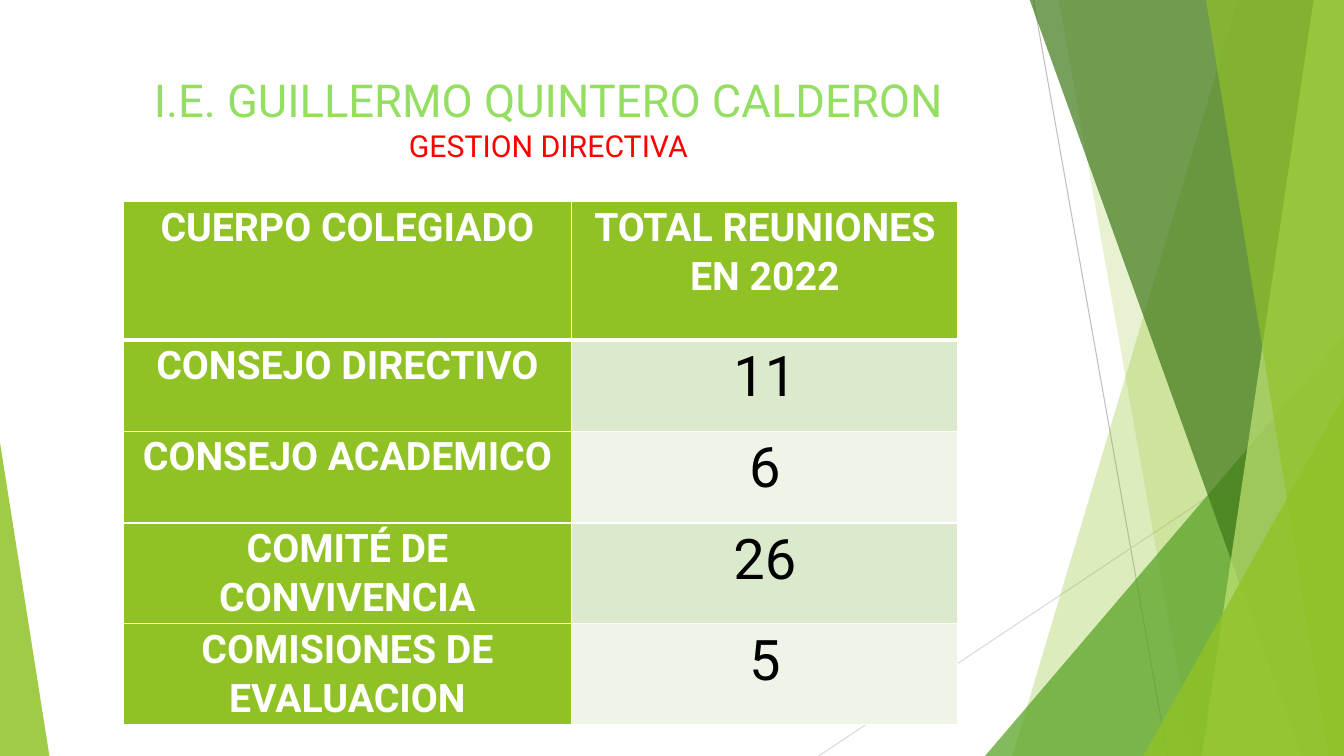
import pptx
import pptx.dml.color
import pptx.enum.shapes
import pptx.enum.text
import pptx.oxml.ns
import pptx.util
from lxml import etree

Inches = pptx.util.Inches
RGBColor = pptx.dml.color.RGBColor
qn = pptx.oxml.ns.qn

FONT = "Roboto"
WHITE = RGBColor(0xFF, 0xFF, 0xFF)
BLACK = RGBColor(0x00, 0x00, 0x00)
RED = RGBColor(0xFF, 0x00, 0x00)
TITLE_GREEN = RGBColor(0x94, 0xDE, 0x61)
LIME = RGBColor(0x90, 0xC2, 0x26)
PALE_LIME = RGBColor(0xC0, 0xE4, 0x74)
GREEN = RGBColor(0x54, 0xA0, 0x21)
DARK_GREEN = RGBColor(0x3F, 0x78, 0x19)
BAND_DARK = RGBColor(0xDB, 0xE9, 0xCD)
BAND_LIGHT = RGBColor(0xEE, 0xF4, 0xE8)
GREY = RGBColor(0xBF, 0xBF, 0xBF)
LIGHT_GREY = RGBColor(0xD9, 0xD9, 0xD9)

WIDTH, HEIGHT = 13.33, 7.5
BAND_TOP = -0.01

HEADER = ("CUERPO COLEGIADO", "TOTAL REUNIONES EN 2022")
MEETINGS = (
    ("CONSEJO DIRECTIVO", "11"),
    ("CONSEJO ACADEMICO", "6"),
    ("COMITÉ DE CONVIVENCIA", "26"),
    ("COMISIONES DE EVALUACION", "5"),
)


def add_line(slide, start, end, color):
    line = slide.shapes.add_connector(
        pptx.enum.shapes.MSO_CONNECTOR.STRAIGHT,
        *(Inches(value) for value in start + end))
    line.line.color.rgb = color
    line.line.width = pptx.util.Pt(0.75)
    etree.SubElement(line._element.spPr, qn("a:effectLst"))


def paint(shape, color, opacity):
    """Fill a shape with a see-through colour, without outline or shadow."""
    shape.shadow.inherit = False
    shape.line.fill.background()
    shape.fill.solid()
    shape.fill.fore_color.rgb = color
    color_node = shape._element.spPr.find(qn("a:solidFill"))[0]
    etree.SubElement(color_node, qn("a:alpha"), val=str(opacity * 1000))


def add_band(slide, top_x, bottom_x, color, opacity):
    """Draw a band from a slanted left edge to the slide's right edge."""
    builder = slide.shapes.build_freeform(Inches(top_x), Inches(BAND_TOP), scale=1.0)
    corners = ((WIDTH, BAND_TOP), (WIDTH, HEIGHT), (bottom_x, HEIGHT))
    builder.add_line_segments([(Inches(x), Inches(y)) for x, y in corners])
    paint(builder.convert_to_shape(), color, opacity)


def add_triangle(slide, left, top, width, apex, color, opacity):
    """Draw a triangle that stands on the slide's bottom edge."""
    triangle = slide.shapes.add_shape(
        pptx.enum.shapes.MSO_SHAPE.ISOSCELES_TRIANGLE,
        Inches(left), Inches(top), Inches(width), Inches(HEIGHT - top))
    triangle.adjustments[0] = apex
    paint(triangle, color, opacity)


def add_run(paragraph, text, size, color, bold=False):
    run = paragraph.add_run()
    run.text = text
    run.font.name = FONT
    run.font.size = pptx.util.Pt(size)
    run.font.color.rgb = color
    run.font.bold = bold


def add_title(slide):
    box = slide.shapes.add_textbox(Inches(0.74), Inches(0.67), Inches(9.4), Inches(1))
    frame = box.text_frame
    frame.word_wrap = True
    frame.vertical_anchor = pptx.enum.text.MSO_ANCHOR.BOTTOM
    paragraph = frame.paragraphs[0]
    paragraph.alignment = pptx.enum.text.PP_ALIGN.CENTER
    add_run(paragraph, "I.E. GUILLERMO QUINTERO CALDERON", 32.4, TITLE_GREEN)
    paragraph.add_line_break()
    add_run(paragraph, "GESTION DIRECTIVA", 21.6, RED)


def set_borders(cell, top, bottom):
    properties = cell._tc.get_or_add_tcPr()
    for side, points in (("L", 1), ("R", 1), ("T", top), ("B", bottom)):
        line = etree.SubElement(properties, qn(f"a:ln{side}"),
                                w=str(pptx.util.Pt(points)))
        fill = etree.SubElement(line, qn("a:solidFill"))
        etree.SubElement(fill, qn("a:srgbClr"), val=str(WHITE))


def fill_cell(cell, text, row, is_label):
    set_borders(cell, top=3 if row == 1 else 1, bottom=3 if row == 0 else 1)
    cell.margin_left = cell.margin_right = Inches(0.07)
    cell.margin_top = cell.margin_bottom = 0
    cell.fill.solid()
    paragraph = cell.text_frame.paragraphs[0]
    paragraph.alignment = pptx.enum.text.PP_ALIGN.CENTER
    paragraph.line_spacing = 1.07
    if is_label:
        cell.fill.fore_color.rgb = LIME
        add_run(paragraph, text, 28, WHITE, bold=True)
    else:
        cell.fill.fore_color.rgb = BAND_DARK if row % 2 else BAND_LIGHT
        add_run(paragraph, text, 40, BLACK)


def add_meetings_table(slide):
    rows = (HEADER,) + MEETINGS
    column_widths = (4.45, 3.83)
    row_heights = (1.37,) + (0.91,) * len(MEETINGS)
    table = slide.shapes.add_table(
        len(rows), len(HEADER), Inches(1.22), Inches(2),
        Inches(sum(column_widths)), Inches(sum(row_heights))).table
    table.horz_banding = False
    for column, width in zip(table.columns, column_widths):
        column.width = Inches(width)
    for row, height in zip(table.rows, row_heights):
        row.height = Inches(height)
    for row, texts in enumerate(rows):
        for column, text in enumerate(texts):
            fill_cell(table.cell(row, column), text, row,
                      is_label=row == 0 or column == 0)


def add_background(slide):
    add_line(slide, (10.25, 0), (11.58, HEIGHT), GREY)
    add_line(slide, (WIDTH, 4.03), (8.12, HEIGHT), LIGHT_GREY)
    add_band(slide, 12.28, 10.04, LIME, 30)
    add_band(slide, 10.5, 11.83, LIME, 20)
    add_triangle(slide, 9.77, 3.33, 3.56, 1, GREEN, 72)
    add_band(slide, 10.21, 12.91, DARK_GREEN, 70)
    add_band(slide, 13.03, 11.92, PALE_LIME, 70)
    add_band(slide, 11.96, 13.18, LIME, 65)
    add_triangle(slide, 11.34, 3.93, 1.99, 1, LIME, 80)
    add_triangle(slide, 0, 4.39, 0.49, 0, LIME, 85)


def main():
    presentation = pptx.Presentation()
    presentation.slide_width = Inches(WIDTH)
    presentation.slide_height = Inches(HEIGHT)
    slide = presentation.slides.add_slide(presentation.slide_layouts[6])
    add_background(slide)
    add_title(slide)
    add_meetings_table(slide)
    presentation.save("out.pptx")


if __name__ == "__main__":
    main()
